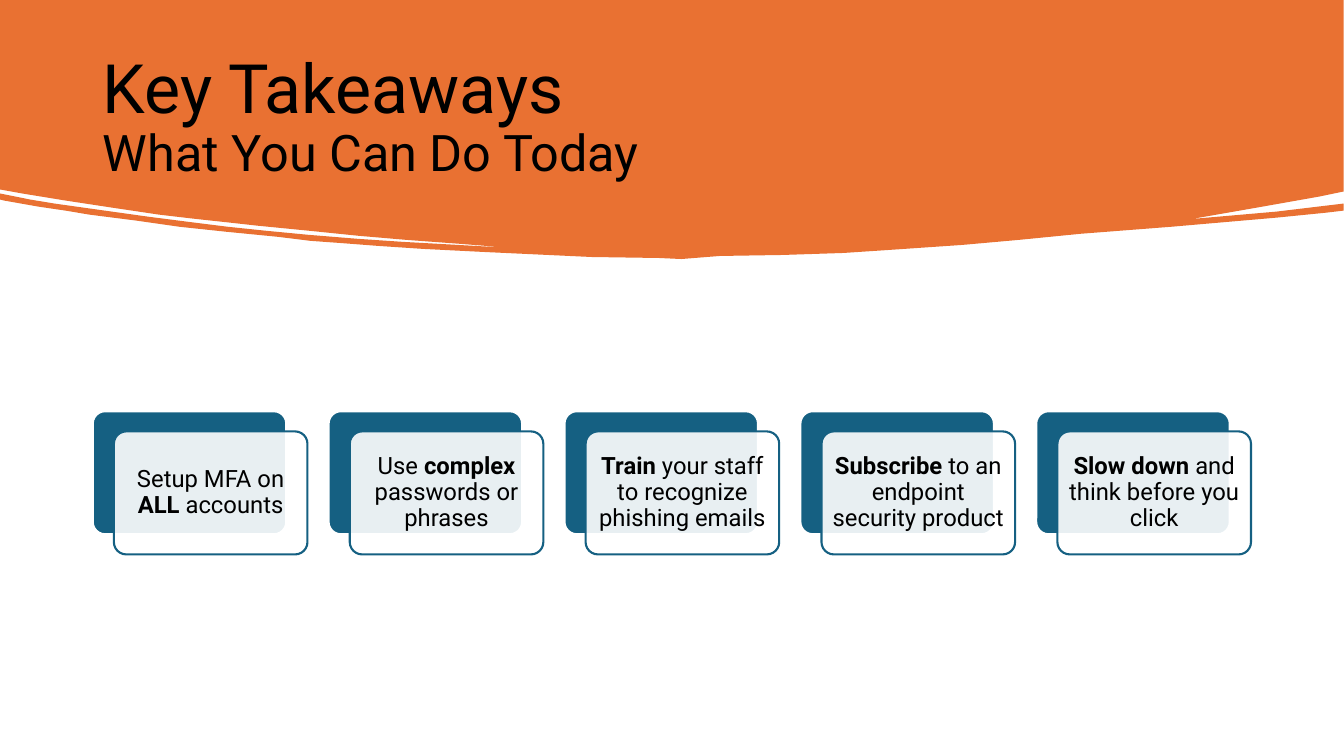
from dataclasses import dataclass

from lxml import etree
from pptx import Presentation
from pptx import util as u
from pptx.dml.color import RGBColor
from pptx.enum import shapes, text
from pptx.oxml.ns import qn


@dataclass(frozen=True)
class Theme:
    orange: RGBColor = RGBColor(0xE9, 0x71, 0x32)
    blue: RGBColor = RGBColor(0x15, 0x60, 0x82)
    white: RGBColor = RGBColor(0xFF, 0xFF, 0xFF)
    black: RGBColor = RGBColor(0, 0, 0)
    font: str = "Roboto"
    title_size: float = 48.6
    subtitle_size: float = 36
    card_size: float = 17


theme = Theme()

presentation = Presentation()
presentation.slide_width = u.Inches(13.333)
presentation.slide_height = u.Inches(7.5)
slide = presentation.slides.add_slide(presentation.slide_layouts[5])

# Banner outline in hundredths of an inch, clockwise from the top left
banner_outline = [
    (0, 0), (1333, 0), (1333, 190), (1309, 195), (1247, 206), (1184, 217),
    (1175, 218), (1186, 217), (1266, 210), (1333, 202), (1333, 209),
    (1316, 211), (1266, 216), (1162, 225), (1072, 232), (1011, 238),
    (955, 243), (882, 248), (837, 251), (776, 253), (714, 254), (676, 257),
    (654, 256), (587, 255), (480, 250), (420, 247), (375, 244), (336, 241),
    (308, 239), (276, 235), (225, 230), (178, 225), (136, 219), (89, 213),
    (65, 209), (38, 205), (4, 199), (0, 198), (0, 192), (30, 198), (54, 202),
    (104, 209), (147, 215), (186, 220), (226, 225), (264, 229), (306, 233),
    (355, 237), (400, 240), (454, 243), (489, 245), (504, 245), (495, 245),
    (457, 242), (403, 238), (356, 234), (307, 229), (256, 224), (229, 221),
    (192, 217), (158, 213), (111, 206), (65, 199), (22, 192), (0, 188),
]
builder = slide.shapes.build_freeform(*banner_outline[0], scale=u.Inches(0.01))
builder.add_line_segments(banner_outline[1:], close=True)
banner = builder.convert_to_shape()
banner.shadow.inherit = False
banner.fill.solid()
banner.fill.fore_color.rgb = theme.orange
banner.line.fill.background()

# The title stands in front of the banner
title = slide.shapes.title
banner._element.addnext(title._element)
title.left, title.top = u.Inches(0.92), u.Inches(0.44)
title.width, title.height = u.Inches(11.5), u.Inches(1.47)
frame = title.text_frame
frame.auto_size = text.MSO_AUTO_SIZE.NONE
frame.word_wrap = True
frame.vertical_anchor = text.MSO_ANCHOR.MIDDLE
heading = frame.paragraphs[0]
heading.alignment = text.PP_ALIGN.LEFT
heading.line_spacing = 0.9
heading.font.name = theme.font
heading.font.color.rgb = theme.black
for index, (words, size) in enumerate([
    ("Key Takeaways", theme.title_size),
    ("What You Can Do Today", theme.subtitle_size),
]):
    if index:
        heading.add_line_break()
    run = heading.add_run()
    run.text = words
    run.font.size = u.Pt(size)


def add_card(left, top, fill, line):
    card = slide.shapes.add_shape(
        shapes.MSO_SHAPE.ROUNDED_RECTANGLE,
        u.Inches(left), u.Inches(top), u.Inches(1.92), u.Inches(1.22))
    card.adjustments[0] = 0.1
    card.shadow.inherit = False
    card.fill.solid()
    card.fill.fore_color.rgb = fill
    card.line.color.rgb = line
    card.line.width = u.Pt(1.5)
    return card


# Each takeaway is a list of (words, bold)
takeaways = [
    [("Setup MFA on ", False), ("ALL", True), (" accounts", False)],
    [("Use ", False), ("complex ", True), ("passwords or phrases", False)],
    [("Train", True), (" your staff to recognize phishing emails", False)],
    [("Subscribe", True), (" to an endpoint security product", False)],
    [("Slow down ", True), ("and think before you click", False)],
]
first_left, card_top, column_pitch = 0.92, 4.08, 2.34
offset_x, offset_y = 0.21, 0.2

for column, takeaway in enumerate(takeaways):
    left = first_left + column * column_pitch
    add_card(left, card_top, theme.blue, theme.white)
    front = add_card(left + offset_x, card_top + offset_y, theme.white, theme.blue)
    color = front.fill._xPr.find(".//" + qn("a:srgbClr"))
    etree.SubElement(color, qn("a:alpha"), val="90000")

    frame = front.text_frame
    frame.word_wrap = True
    frame.vertical_anchor = text.MSO_ANCHOR.MIDDLE
    # The rounded corners already inset the text by 0.04 inch
    frame.margin_left = frame.margin_right = u.Inches(0.07)
    frame.margin_top = frame.margin_bottom = u.Inches(0.07)
    paragraph = frame.paragraphs[0]
    paragraph.alignment = text.PP_ALIGN.CENTER
    paragraph.line_spacing = 0.9
    paragraph.font.name = theme.font
    paragraph.font.size = u.Pt(theme.card_size)
    paragraph.font.color.rgb = theme.black
    for words, bold in takeaway:
        run = paragraph.add_run()
        run.text = words
        run.font.bold = bold

presentation.save("out.pptx")
